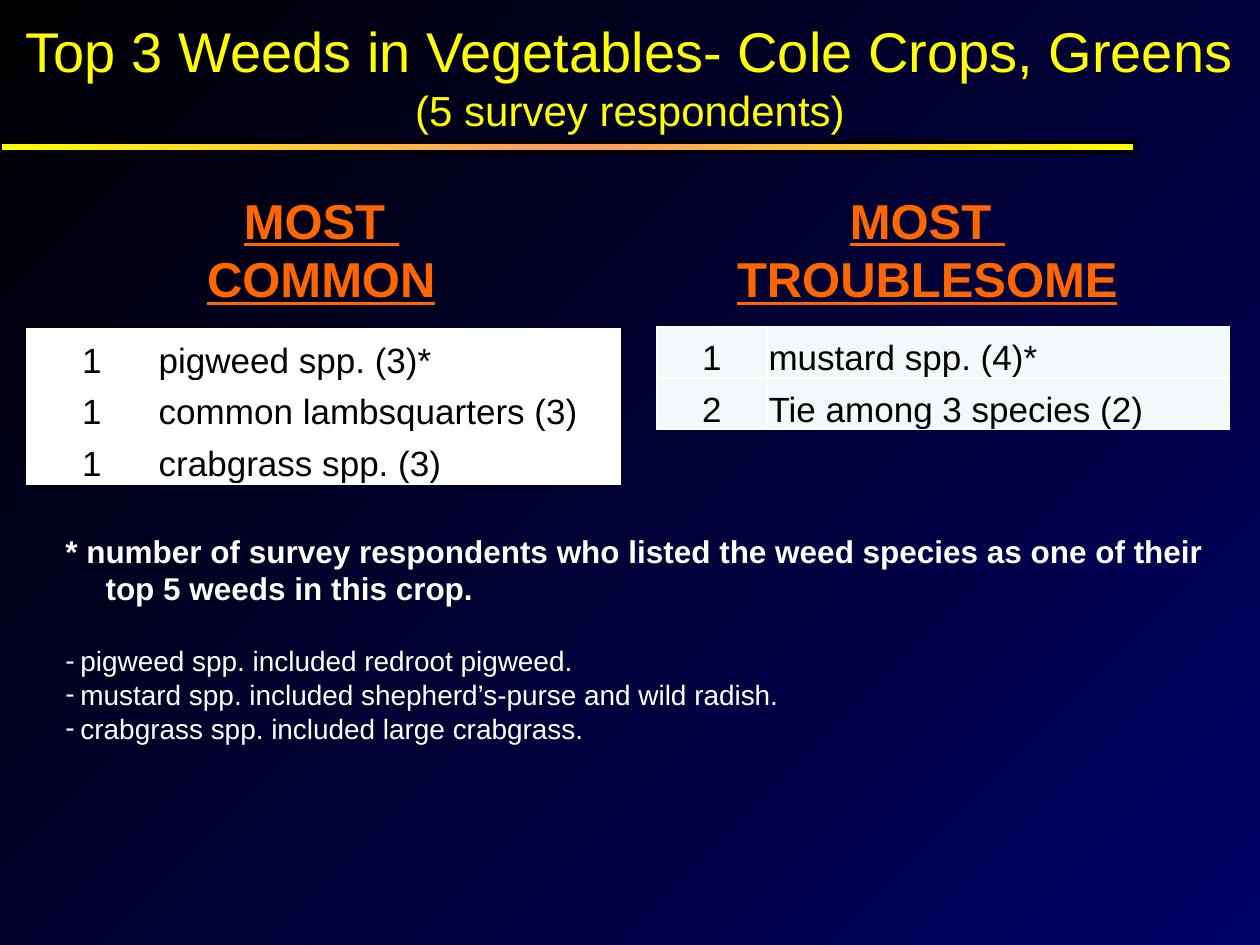
from copy import deepcopy

from lxml.etree import SubElement
from pptx import Presentation
from pptx.dml.color import RGBColor
from pptx.enum.shapes import MSO_SHAPE
from pptx.enum.text import MSO_ANCHOR, MSO_AUTO_SIZE, PP_ALIGN
from pptx.oxml.ns import qn
from pptx.util import Inches, Pt

BLACK = RGBColor(0x00, 0x00, 0x00)
NAVY = RGBColor(0x00, 0x00, 0x66)
YELLOW = RGBColor(0xFF, 0xFF, 0x00)
SALMON = RGBColor(0xFF, 0x99, 0x66)
ORANGE = RGBColor(0xFF, 0x66, 0x00)
WHITE = RGBColor(0xFF, 0xFF, 0xFF)
PALE = RGBColor(0xF3, 0xF9, 0xFA)

FONT = "Arial"
ROW_HEIGHT = 0.41
NAME_WIDTH = 3.67
NOTES = [
    "pigweed spp. included redroot pigweed.",
    "mustard spp. included shepherd’s-purse and wild radish.",
    "crabgrass spp. included large crabgrass.",
]


def format_paragraph(paragraph, size, color, bold=False, underline=False,
                     align=PP_ALIGN.LEFT):
    paragraph.alignment = align
    for run in paragraph.runs:
        font = run.font
        font.name, font.size = FONT, Pt(size)
        font.bold, font.underline = bold, underline
        font.color.rgb = color


def set_gradient(fill, element, colors, angle):
    """Spread the colours evenly along a linear gradient."""
    fill.gradient()
    fill.gradient_angle = angle
    stop_list = next(element.iter(qn("a:gsLst")))
    while len(stop_list) < len(colors):
        stop_list.append(deepcopy(stop_list[0]))
    for index, (stop, color) in enumerate(zip(fill.gradient_stops, colors)):
        stop.color.rgb = color
        stop.position = index / (len(colors) - 1)


def add_text(slide, left, top, width, height, lines, wrap=True):
    shape = slide.shapes.add_textbox(
        Inches(left), Inches(top), Inches(width), Inches(height))
    text_frame = shape.text_frame
    text_frame.text = "\n".join(lines)
    text_frame.word_wrap = wrap
    return text_frame


def add_heading(slide, left, width, lines, wrap=True):
    text_frame = add_text(slide, left, 1.46, width, 1.04, lines, wrap)
    text_frame.auto_size = MSO_AUTO_SIZE.SHAPE_TO_FIT_TEXT
    for paragraph in text_frame.paragraphs:
        format_paragraph(paragraph, 28, ORANGE, True, True, PP_ALIGN.CENTER)


def set_borders(cell, color):
    properties = cell._tc.get_or_add_tcPr()
    for index, side in enumerate(("a:lnL", "a:lnR", "a:lnT", "a:lnB")):
        line = properties.makeelement(qn(side), {"w": str(Pt(1))})
        properties.insert(index, line)
        solid = SubElement(line, qn("a:solidFill"))
        SubElement(solid, qn("a:srgbClr"), val=str(color))


def add_weed_table(slide, left, top, rank_width, rows, fill_color):
    table = slide.shapes.add_table(
        len(rows), 2, Inches(left), Inches(top),
        Inches(rank_width + NAME_WIDTH), Inches(ROW_HEIGHT * len(rows))).table
    table.first_row = table.horz_banding = False
    table.columns[0].width = Inches(rank_width)
    table.columns[1].width = Inches(NAME_WIDTH)
    for row, values in zip(table.rows, rows):
        row.height = Inches(ROW_HEIGHT)
        for cell, value, align in zip(row.cells, values,
                                      (PP_ALIGN.CENTER, PP_ALIGN.LEFT)):
            cell.text = value
            cell.vertical_anchor = MSO_ANCHOR.BOTTOM
            cell.margin_left = cell.margin_right = Inches(0.01)
            cell.margin_top, cell.margin_bottom = Inches(0.01), 0
            cell.fill.solid()
            cell.fill.fore_color.rgb = fill_color
            set_borders(cell, WHITE)
            format_paragraph(cell.text_frame.paragraphs[0], 20, BLACK,
                             align=align)


def set_hanging_indent(paragraph, indent, bullet=None):
    properties = paragraph._p.get_or_add_pPr()
    properties.set("marL", str(Inches(indent)))
    properties.set("indent", str(-Inches(indent)))
    if bullet:
        SubElement(properties, qn("a:buFont"), typeface=FONT)
        SubElement(properties, qn("a:buChar"), char=bullet)


def add_title(slide):
    text_frame = add_text(slide, 0, 0, 10, 1.2, [
        "Top 3 Weeds in Vegetables- Cole Crops, Greens",
        "(5 survey respondents)"])
    text_frame.vertical_anchor = MSO_ANCHOR.MIDDLE
    for paragraph, size in zip(text_frame.paragraphs, (32, 24)):
        format_paragraph(paragraph, size, YELLOW, align=PP_ALIGN.CENTER)


def add_title_bar(slide):
    bar = slide.shapes.add_shape(
        MSO_SHAPE.RECTANGLE, 0, Inches(1.13), Inches(9.01), Inches(0.08))
    bar.shadow.inherit = False
    set_gradient(bar.fill, bar._element, [YELLOW, SALMON, YELLOW], 0)
    bar.line.color.rgb = BLACK
    bar.line.width = Pt(2.25)


def add_footnotes(slide):
    text_frame = add_text(slide, 0.42, 4.17, 9.25, 1.82, [
        "* number of survey respondents who listed the weed species "
        "as one of their  top 5 weeds in this crop.", *NOTES])
    text_frame.auto_size = MSO_AUTO_SIZE.SHAPE_TO_FIT_TEXT
    explanation, *notes = text_frame.paragraphs
    format_paragraph(explanation, 18, WHITE, bold=True)
    set_hanging_indent(explanation, 0.25)
    notes[0].space_before = Pt(21)
    for paragraph in notes:
        format_paragraph(paragraph, 16, WHITE)
        set_hanging_indent(paragraph, 0.12, "-")


def main():
    presentation = Presentation()
    presentation.slide_width = Inches(10)
    presentation.slide_height = Inches(7.5)
    slide = presentation.slides.add_slide(presentation.slide_layouts[6])

    # Background and title
    set_gradient(slide.background.fill, slide._element, [BLACK, NAVY], 315)
    add_title_bar(slide)
    add_title(slide)

    # Most common weeds
    add_heading(slide, 1.35, 2.4, ["MOST ", "COMMON"])
    add_weed_table(slide, 0.21, 2.61, 1.04, [
        ("1", "pigweed spp. (3)*"),
        ("1", "common lambsquarters (3)"),
        ("1", "crabgrass spp. (3)")], WHITE)

    # Most troublesome weeds
    add_heading(slide, 5.73, 3.26, ["MOST ", "TROUBLESOME"], wrap=False)
    add_weed_table(slide, 5.21, 2.59, 0.88, [
        ("1", "mustard spp. (4)*"),
        ("2", "Tie among 3 species (2)")], PALE)

    add_footnotes(slide)
    presentation.save("out.pptx")


if __name__ == "__main__":
    main()
